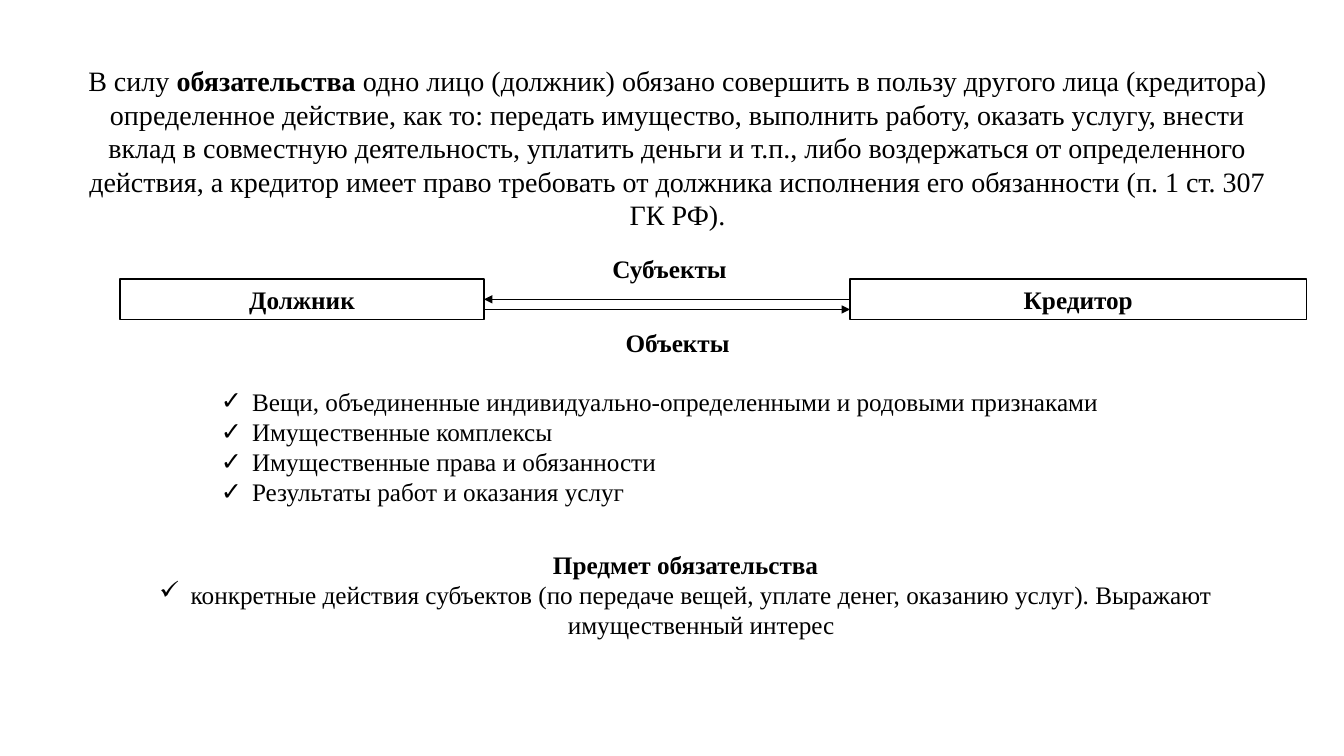
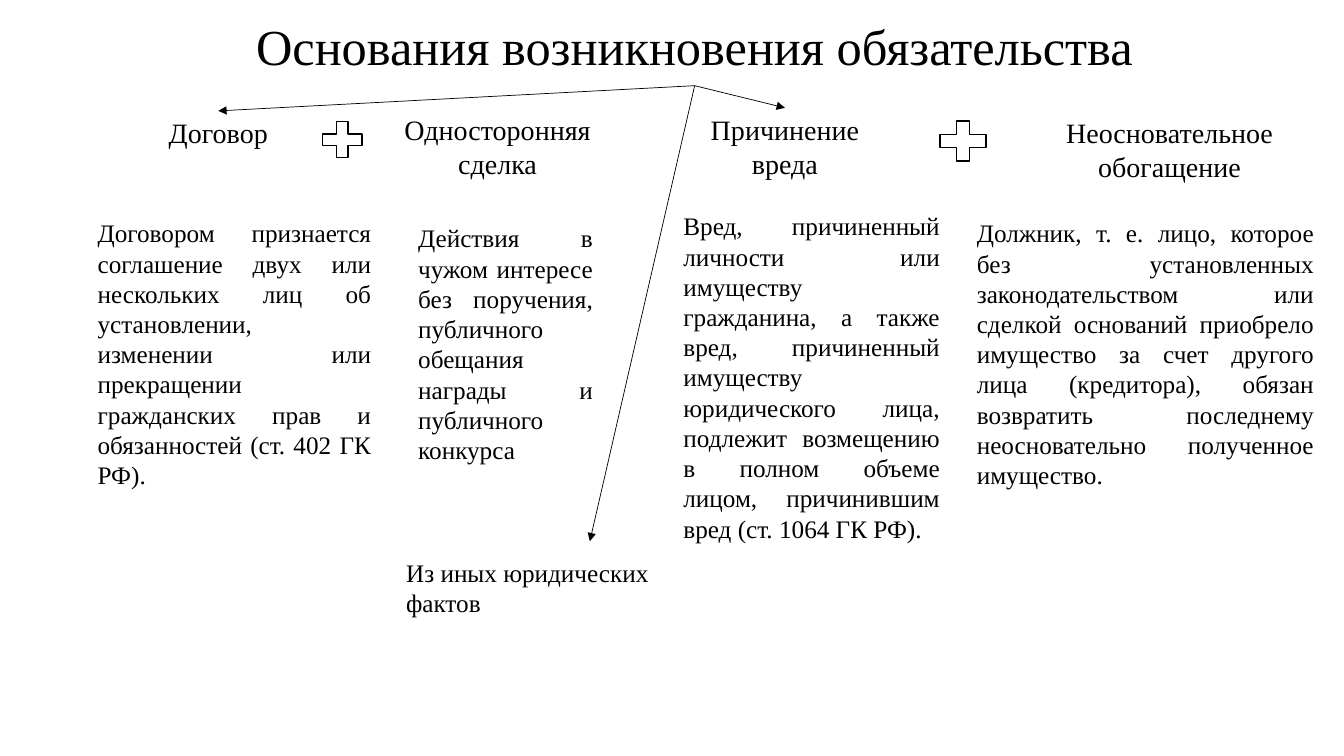
"""Two slides on obligations: their elements and the grounds on which they arise."""
import dataclasses
import typing

import lxml.etree
import pptx
import pptx.dml.color
import pptx.enum.shapes
import pptx.enum.text
import pptx.oxml.ns
import pptx.util

Inches = pptx.util.Inches
Pt = pptx.util.Pt
qn = pptx.oxml.ns.qn
ALIGN = pptx.enum.text.PP_ALIGN
SHAPE = pptx.enum.shapes.MSO_SHAPE
AUTO_SIZE = pptx.enum.text.MSO_AUTO_SIZE
ANCHOR = pptx.enum.text.MSO_ANCHOR


@dataclasses.dataclass(frozen=True)
class Theme:
    """Colours, typeface, type sizes and line weights of the deck."""
    ink: typing.Any = pptx.dml.color.RGBColor(0, 0, 0)
    paper: typing.Any = pptx.dml.color.RGBColor(255, 255, 255)
    face: str = "Times New Roman"
    title: int = 36
    heading: int = 20
    text: int = 18
    outline: float = 1
    arrow: float = 0.5
    check: str = "✓"
    check_indent: float = 0.31


THEME = Theme()


class Box(typing.NamedTuple):
    """A rectangle in inches."""
    left: float
    top: float
    width: float
    height: float

    def inner(self, left, top, width, height):
        """Return a box given relative to this one."""
        return Box(self.left + left, self.top + top, width, height)

    def lengths(self):
        """Return the four measures as lengths."""
        return [Inches(round(measure, 2)) for measure in self]


def place(placeholder, box):
    """Move a placeholder to a box."""
    (placeholder.left, placeholder.top,
     placeholder.width, placeholder.height) = box.lengths()


def style(paragraph, size=THEME.text, align=ALIGN.CENTER, bold=False):
    """Set the alignment, spacing and font of a paragraph."""
    paragraph.alignment = align
    paragraph.space_before = Pt(0)
    paragraph.font.name = THEME.face
    paragraph.font.size = Pt(size)
    paragraph.font.color.rgb = THEME.ink
    if bold:
        paragraph.font.bold = True


def add_check(paragraph):
    """Give a paragraph a hanging check mark."""
    properties = paragraph._p.get_or_add_pPr()
    indent = Inches(THEME.check_indent)
    properties.set("marL", str(indent))
    properties.set("indent", str(-indent))
    lxml.etree.SubElement(properties, qn("a:buChar")).set("char", THEME.check)


def add_label(slide, box, text, **look):
    """Add a wrapped text box with one paragraph and return it."""
    label = slide.shapes.add_textbox(*box.lengths())
    frame = label.text_frame
    frame.word_wrap = True
    frame.auto_size = AUTO_SIZE.SHAPE_TO_FIT_TEXT
    frame.text = text
    style(frame.paragraphs[0], **look)
    return label


def add_outlined(slide, kind, box):
    """Add a white preset shape with a thin black outline."""
    shape = slide.shapes.add_shape(kind, *box.lengths())
    shape.shadow.inherit = False
    shape.fill.solid()
    shape.fill.fore_color.rgb = THEME.paper
    shape.line.color.rgb = THEME.ink
    shape.line.width = Pt(THEME.outline)
    return shape


def add_arrow(slide, start, end):
    """Add a straight arrow between two points in inches."""
    arrow = slide.shapes.add_connector(
        pptx.enum.shapes.MSO_CONNECTOR.STRAIGHT,
        *(Inches(round(measure, 2)) for measure in (*start, *end)))
    arrow.line.color.rgb = THEME.ink
    arrow.line.width = Pt(THEME.arrow)
    lxml.etree.SubElement(
        arrow.line._get_or_add_ln(), qn("a:tailEnd")).set("type", "triangle")
    lxml.etree.SubElement(arrow._element.spPr, qn("a:effectLst"))
    return arrow


def fill_definition(slide, box):
    """Write the definition of an obligation into the title."""
    definition = slide.shapes.title
    place(definition, box)
    frame = definition.text_frame
    frame.auto_size = AUTO_SIZE.NONE
    frame.vertical_anchor = ANCHOR.TOP
    paragraph = frame.paragraphs[0]
    style(paragraph, THEME.heading)
    paragraph.add_run().text = "В силу "
    term = paragraph.add_run()
    term.text = "обязательства"
    term.font.bold = True
    paragraph.add_run().text = (
        " одно лицо (должник) обязано совершить в пользу другого лица "
        "(кредитора) определенное действие, как то: передать имущество, "
        "выполнить работу, оказать услугу, внести вклад в совместную "
        "деятельность, уплатить деньги и т.п., либо воздержаться от "
        "определенного действия, а кредитор имеет право требовать от должника "
        "исполнения его обязанности (п. 1 ст. 307 ГК РФ).")


def add_party(slide, box, name):
    """Add the rectangle of one party to the obligation."""
    party = add_outlined(slide, SHAPE.RECTANGLE, box)
    party.text_frame.word_wrap = True
    party.text_frame.auto_size = AUTO_SIZE.SHAPE_TO_FIT_TEXT
    party.text_frame.text = name
    style(party.text_frame.paragraphs[0], bold=True)
    return party


def add_parties(slide, box):
    """Add debtor and creditor with the arrows between them."""
    row, height = 0.31, 0.4
    debtor_box = box.inner(0, row, 3.61, height)
    creditor_box = box.inner(7.24, row, 4.53, height)
    add_label(slide, box.inner(3.61, 0, 3.68, height), "Субъекты", bold=True)
    debtor = add_party(slide, debtor_box, "Должник")
    creditor = add_party(slide, creditor_box, "Кредитор")
    debtor_side = debtor_box.left + debtor_box.width
    middle = debtor_box.top + height / 2
    add_arrow(slide, (debtor_side, middle + 0.1),
              (creditor_box.left, middle + 0.1))
    claim = add_arrow(slide, (creditor_box.left, middle), (debtor_side, middle))
    claim.begin_connect(creditor, 1)
    claim.end_connect(debtor, 3)
    add_label(slide, box.inner(4.16, 0.74, 2.74, height), "Объекты", bold=True)


def fill_objects(slide, box):
    """Write the checked list of objects into the body."""
    objects = slide.placeholders[1]
    place(objects, box)
    frame = objects.text_frame
    frame.auto_size = AUTO_SIZE.NONE
    frame.text = "\n".join((
        "Вещи, объединенные индивидуально-определенными и родовыми признаками",
        "Имущественные комплексы",
        "Имущественные права и обязанности",
        "Результаты работ и оказания услуг"))
    for paragraph in frame.paragraphs:
        add_check(paragraph)
        style(paragraph, align=ALIGN.LEFT)


def add_subject_matter(slide, box):
    """Add the subject matter of the obligation."""
    matter = add_label(slide, box, "Предмет обязательства", bold=True)
    actions = matter.text_frame.add_paragraph()
    actions.text = (
        "конкретные действия субъектов (по передаче вещей, уплате денег, "
        "оказанию услуг). Выражают имущественный интерес")
    add_check(actions)
    style(actions)


def build_elements_slide(deck):
    """Build the slide on the elements of an obligation."""
    slide = deck.slides.add_slide(deck.slide_layouts[1])
    fill_definition(slide, Box(0.71, 0.58, 12.02, 1.78))
    add_parties(slide, Box(1.19, 2.46, 11.77, 1.14))
    fill_objects(slide, Box(2.09, 3.78, 10.25, 1.31))
    add_subject_matter(slide, Box(0.64, 5.4, 12.32, 1.01))


class Ground(typing.NamedTuple):
    """A ground of obligation with boxes relative to the region."""
    heading: str
    heading_box: tuple
    description: str
    description_box: tuple


GROUNDS = (
    Ground("Договор", (0, 0.03, 2.59, 0.44),
           "Договором признается соглашение двух или нескольких лиц об "
           "установлении, изменении или прекращении гражданских прав и "
           "обязанностей (ст. 402 ГК РФ).", (0, 1.04, 2.91, 2.83)),
    Ground("Односторонняя сделка", (3.02, 0, 2.09, 0.77),
           "Действия в чужом интересе без поручения, публичного обещания "
           "награды и публичного конкурса", (3.18, 1.09, 1.93, 2.52)),
    Ground("Причинение вреда", (5.81, 0, 2.21, 0.77),
           "Вред, причиненный личности или имуществу гражданина, а также "
           "вред, причиненный имуществу юридического лица, подлежит "
           "возмещению в полном объеме лицом, причинившим вред "
           "(ст. 1064 ГК РФ).", (5.81, 0.97, 2.74, 3.13)),
    Ground("Неосновательное обогащение", (9, 0.03, 3.46, 0.77),
           "Должник, т. е. лицо, которое без установленных законодательством "
           "или сделкой оснований приобрело имущество за счет другого лица "
           "(кредитора), обязан возвратить последнему неосновательно "
           "полученное имущество.", (8.72, 1.04, 3.54, 2.83)),
)


def fill_title(slide, box, text):
    """Write the slide title."""
    title = slide.shapes.title
    place(title, box)
    title.text_frame.auto_size = AUTO_SIZE.NONE
    title.text_frame.vertical_anchor = ANCHOR.MIDDLE
    title.text_frame.text = text
    paragraph = title.text_frame.paragraphs[0]
    paragraph.line_spacing = 0.9
    style(paragraph, THEME.title)
    return title


def add_grounds(slide, box, title):
    """Add the grounds, the plus signs and the arrows from the title."""
    headings = []
    for ground in GROUNDS:
        headings.append(add_label(slide, box.inner(*ground.heading_box),
                                  ground.heading, size=THEME.heading))
        add_label(slide, box.inner(*ground.description_box),
                  ground.description, align=ALIGN.JUSTIFY)
    for plus_box in ((2.26, 0.07, 0.53, 0.49), (8.37, 0.06, 0.62, 0.54)):
        add_outlined(slide, SHAPE.MATH_PLUS, box.inner(*plus_box))
    origin = (box.left + 6.02, box.top - 0.22)
    for heading in headings[::2]:
        branch = add_arrow(slide, origin, (box.left, box.top))
        branch.begin_connect(title, 2)
        branch.end_connect(heading, 0)
    others = add_arrow(slide, origin, (box.left + 4.98, box.top + 4.3))
    others.begin_connect(title, 2)
    add_label(slide, box.inner(3.06, 4.41, 3.4, 0.71),
              "Из иных юридических фактов", align=ALIGN.LEFT)


def build_grounds_slide(deck):
    """Build the slide on the grounds of an obligation."""
    slide = deck.slides.add_slide(deck.slide_layouts[5])
    title = fill_title(slide, Box(1.14, 0.13, 11.5, 0.72),
                       "Основания возникновения обязательства")
    add_grounds(slide, Box(0.87, 1.07, 12.46, 5.12), title)


def main():
    """Build and save the deck."""
    deck = pptx.Presentation()
    deck.slide_width, deck.slide_height = Inches(13.33), Inches(7.5)
    build_elements_slide(deck)
    build_grounds_slide(deck)
    deck.save("out.pptx")


if __name__ == "__main__":
    main()
